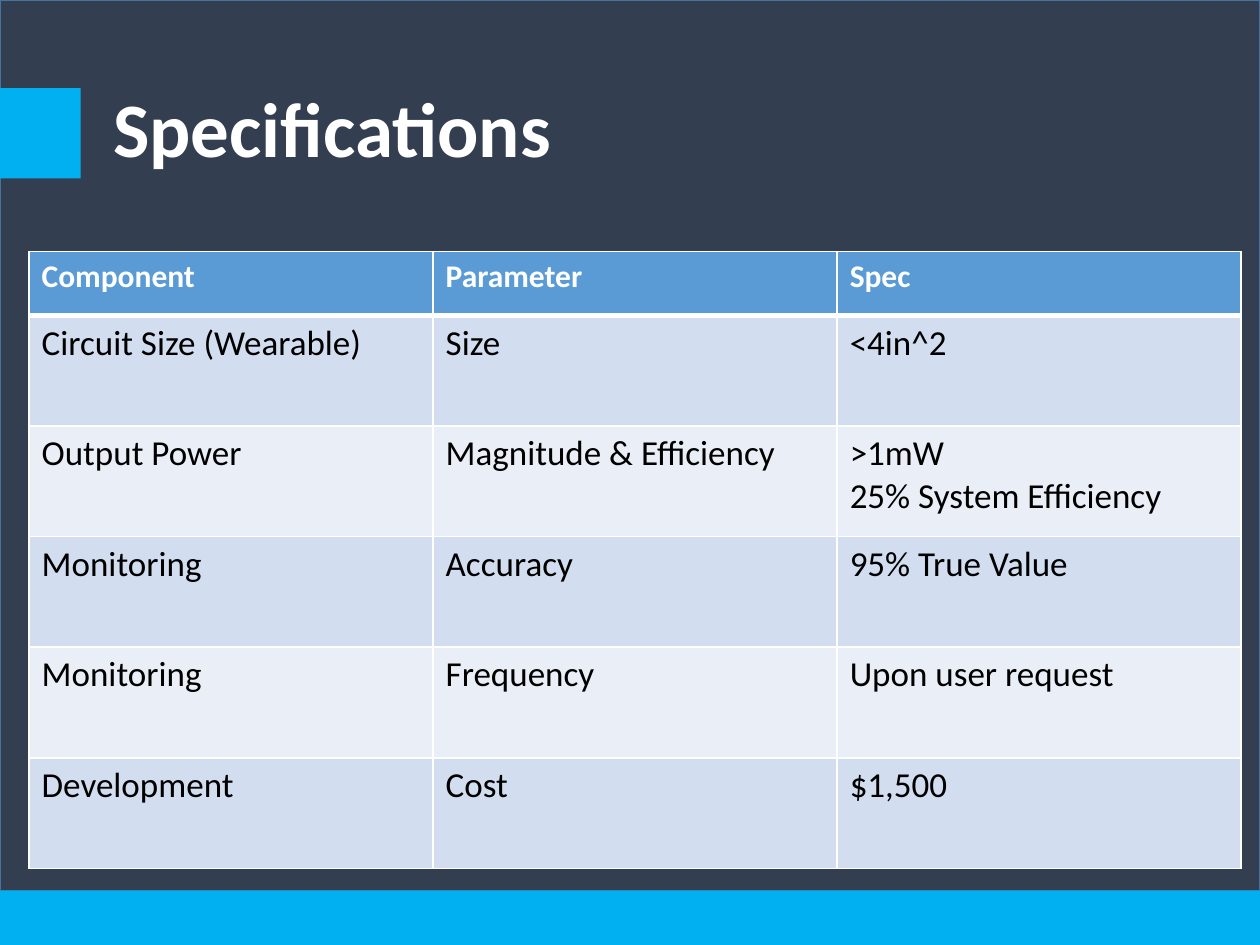
from lxml import etree
from pptx import Presentation
from pptx import util as u
from pptx.dml.color import RGBColor
from pptx.enum import shapes, text
from pptx.oxml.ns import qn

ROWS = [
    ("Component", "Parameter", "Spec"),
    ("Circuit Size (Wearable)", "Size", "<4in^2"),
    ("Output Power", "Magnitude & Efficiency", ">1mW\n25% System Efficiency"),
    ("Monitoring", "Accuracy", "95% True Value"),
    ("Monitoring", "Frequency", "Upon user request"),
    ("Development", "Cost", "$1,500"),
]
HEADER, BANDS = "5B9BD5", ("EAEFF7", "D2DEEF")
NAVY, CYAN, WHITE, BLACK = "333F50", "00B0F0", "FFFFFF", "000000"


def paint(fill, color):
    fill.solid()
    fill.fore_color.rgb = RGBColor.from_string(color)


def write(tf, content, size=20, color=BLACK, bold=False, spacing=None):
    for i, line in enumerate(content.split("\n")):
        p = tf.add_paragraph() if i else tf.paragraphs[0]
        p.line_spacing = spacing
        r = p.add_run()
        r.text = line
        r.font.name = "Calibri"
        r.font.size = u.Pt(size)
        r.font.bold = bold
        r.font.color.rgb = RGBColor.from_string(color)


def add_block(s, x, y, w, h, color, line=None):
    sp = s.shapes.add_shape(shapes.MSO_SHAPE.RECTANGLE, *map(u.Pt, (x, y, w, h)))
    sp.shadow.inherit = False
    paint(sp.fill, color)
    if line:
        paint(sp.line.fill, line)
        sp.line.width = u.Pt(1)
    else:
        sp.line.fill.background()


def add_title(s, content):
    sp = s.shapes.add_textbox(*map(u.Pt, (57.6, 23.76, 768, 104.4)))
    tf = sp.text_frame
    tf.word_wrap = True
    tf.vertical_anchor = text.MSO_ANCHOR.MIDDLE
    write(tf, content, size=44, color=WHITE, bold=True, spacing=0.9)


def set_borders(cell, widths):
    tc_pr = cell._tc.get_or_add_tcPr()
    for i, (side, width) in enumerate(widths.items()):
        ln = etree.Element(qn(f"a:ln{side}"), w=str(u.Pt(width)))
        fill = etree.SubElement(ln, qn("a:solidFill"))
        etree.SubElement(fill, qn("a:srgbClr"), val=WHITE)
        tc_pr.insert(i, ln)


def add_spec_table(s, rows):
    header_h, row_h, col_w = 36.5, 63.2, 230.9
    cols = len(rows[0])
    height = header_h + row_h * (len(rows) - 1)
    frame = s.shapes.add_table(len(rows), cols,
                               *map(u.Pt, (16.6, 143.8, col_w * cols, height)))
    table = frame.table
    for col in table.columns:
        col.width = u.Pt(col_w)
    for i, row in enumerate(rows):
        header = i == 0
        table.rows[i].height = u.Pt(header_h if header else row_h)
        for j, content in enumerate(row):
            cell = table.cell(i, j)
            paint(cell.fill, HEADER if header else BANDS[i % 2])
            set_borders(cell, {"L": 1, "R": 1, "T": 3 if i == 1 else 1,
                               "B": 3 if header else 1})
            write(cell.text_frame, content, size=18 if header else 20,
                  color=WHITE if header else BLACK, bold=header)


def main():
    prs = Presentation()
    prs.slide_width, prs.slide_height = u.Pt(720), u.Pt(540)
    s = prs.slides.add_slide(prs.slide_layouts[6])
    add_block(s, 0, 0, 720, 509, NAVY, line="43739E")
    add_title(s, "Specifications")
    add_block(s, 0, 509, 720, 31, CYAN)
    add_block(s, 0, 50.4, 46.1, 51.6, CYAN)
    add_spec_table(s, ROWS)
    prs.save("out.pptx")


if __name__ == "__main__":
    main()
